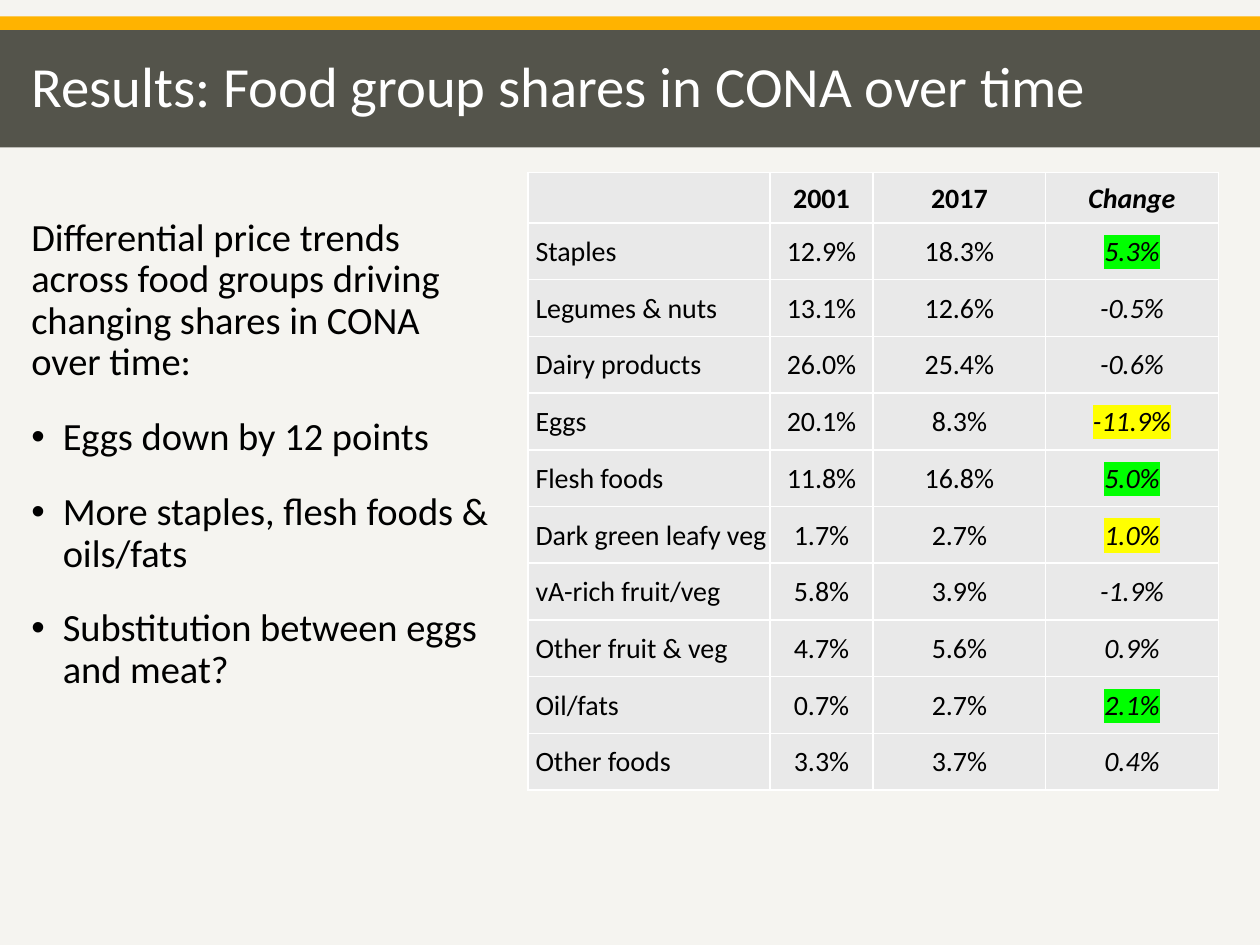
from lxml.etree import SubElement
from pptx import Presentation
from pptx.dml.color import RGBColor
from pptx.enum.shapes import MSO_SHAPE as Shape
from pptx.enum.text import MSO_ANCHOR as Anchor, PP_ALIGN as Align
from pptx.oxml import parse_xml
from pptx.oxml.ns import nsdecls, qn
from pptx.util import Inches, Pt

FONT = "Calibri"
COLORS = {
    "back": "F5F4F0", "gold": "FFB300", "band": "54544B", "cell": "E9E9E9",
    "white": "FFFFFF", "black": "000000", "green": "00FF00", "yellow": "FFFF00",
}
HEADS = ["", "2001", "2017", "Change"]
SHARES = [
    ("Staples", "12.9%", "18.3%", "5.3%"),
    ("Legumes & nuts", "13.1%", "12.6%", "-0.5%"),
    ("Dairy products", "26.0%", "25.4%", "-0.6%"),
    ("Eggs", "20.1%", "8.3%", "-11.9%"),
    ("Flesh foods", "11.8%", "16.8%", "5.0%"),
    ("Dark green leafy veg", "1.7%", "2.7%", "1.0%"),
    ("vA-rich fruit/veg", "5.8%", "3.9%", "-1.9%"),
    ("Other fruit & veg", "4.7%", "5.6%", "0.9%"),
    ("Oil/fats", "0.7%", "2.7%", "2.1%"),
    ("Other foods", "3.3%", "3.7%", "0.4%"),
]
MARKS = {"Staples": "green", "Eggs": "yellow", "Flesh foods": "green",
         "Dark green leafy veg": "yellow", "Oil/fats": "green"}
WIDTHS = [1.92, 0.82, 1.37, 1.37]
INTRO = ("Differential price trends across food groups driving "
         "changing shares in CONA over time:")
POINTS = ["Eggs down by 12 points", "More staples, flesh foods & oils/fats",
          "Substitution between eggs and meat?"]


def rgb(name):
    return RGBColor.from_string(COLORS[name])


def style(run, size, color="black", bold=False, italic=False):
    font = run.font
    font.name, font.size = FONT, Pt(size)
    font.bold, font.italic = bold, italic
    font.color.rgb = rgb(color)


def add_bar(slide, left, top, width, height, color):
    bar = slide.shapes.add_shape(Shape.RECTANGLE, Inches(left), Inches(top),
                                 Inches(width), Inches(height))
    bar.shadow.inherit = False
    bar.fill.solid()
    bar.fill.fore_color.rgb = rgb(color)
    bar.line.fill.background()


def add_box(slide, left, top, width, height):
    box = slide.shapes.add_textbox(Inches(left), Inches(top),
                                   Inches(width), Inches(height))
    box.text_frame.word_wrap = True
    return box.text_frame


def add_header(slide, left, top, width, height):
    """Gold stripe above a dark band that holds the title."""
    stripe = 0.11
    band = height - stripe
    add_bar(slide, left, top, width, stripe, "gold")
    add_bar(slide, left, top + stripe, width, band, "band")
    frame = add_box(slide, left + 0.15, top + stripe, 8.83, band)
    frame.vertical_anchor = Anchor.MIDDLE
    frame.text = "Results: Food group shares in CONA over time"
    title = frame.paragraphs[0]
    title.line_spacing = 0.9
    style(title.runs[0], 32.4, "white")


def add_bullet(para):
    props = para._p.get_or_add_pPr()
    props.set("marL", str(Inches(0.25)))
    props.set("indent", str(-Inches(0.25)))
    SubElement(props, qn("a:buFont"), typeface="Arial")
    SubElement(props, qn("a:buChar"), char="•")


def add_points(slide, left, top, width, height):
    frame = add_box(slide, left, top, width, height)
    frame.text = "\n".join([INTRO] + POINTS)
    for i, para in enumerate(frame.paragraphs):
        if i:
            add_bullet(para)
            para.space_before = Pt(10)
        para.space_after = Pt(9)
        para.line_spacing = 0.9
        style(para.runs[0], 22)


def add_borders(cell):
    props = cell._tc.get_or_add_tcPr()
    for side in "LRTB":
        props.append(parse_xml(
            f'<a:ln{side} {nsdecls("a")} w="{Pt(1)}"><a:solidFill>'
            f'<a:srgbClr val="{COLORS["white"]}"/></a:solidFill></a:ln{side}>'))


def highlight(run, color):
    fill = run._r.get_or_add_rPr().find(qn("a:solidFill"))
    fill.addnext(parse_xml(
        f'<a:highlight {nsdecls("a")}><a:srgbClr val="{COLORS[color]}"/>'
        '</a:highlight>'))


def fill_cell(cell, text, head, col, mark):
    add_borders(cell)
    cell.fill.solid()
    cell.fill.fore_color.rgb = rgb("cell")
    cell.vertical_anchor = Anchor.MIDDLE
    cell.margin_left = cell.margin_right = cell.margin_top = Inches(0.01)
    cell.margin_bottom = 0
    if not text:
        return
    cell.text_frame.text = text
    para = cell.text_frame.paragraphs[0]
    if col:
        para.alignment = Align.CENTER
    else:
        para._p.get_or_add_pPr().set("marL", str(Inches(0.05)))
    last = col == len(HEADS) - 1
    style(para.runs[0], 16, bold=head, italic=last)
    if last and mark:
        highlight(para.runs[0], mark)


def add_shares(slide, left, top, width, height):
    rows = [HEADS] + SHARES
    table = slide.shapes.add_table(len(rows), len(HEADS), Inches(left), Inches(top),
                                   Inches(width), Inches(height)).table
    table.first_row = table.horz_banding = False
    for column, size in zip(table.columns, WIDTHS):
        column.width = Inches(size)
    first = 0.4
    for r, texts in enumerate(rows):
        table.rows[r].height = Inches((height - first) / len(SHARES) if r else first)
        for c, text in enumerate(texts):
            fill_cell(table.cell(r, c), text, r == 0, c, MARKS.get(texts[0]))


def main():
    deck = Presentation()
    deck.slide_width, deck.slide_height = Inches(10), Inches(7.5)
    slide = deck.slides.add_slide(deck.slide_layouts[6])
    slide.background.fill.solid()
    slide.background.fill.fore_color.rgb = rgb("back")
    add_header(slide, 0, 0.13, 10, 1.04)
    add_shares(slide, 4.19, 1.37, sum(WIDTHS), 4.9)
    add_points(slide, 0.15, 1.68, 3.87, 5.16)
    deck.save("out.pptx")


if __name__ == "__main__":
    main()
